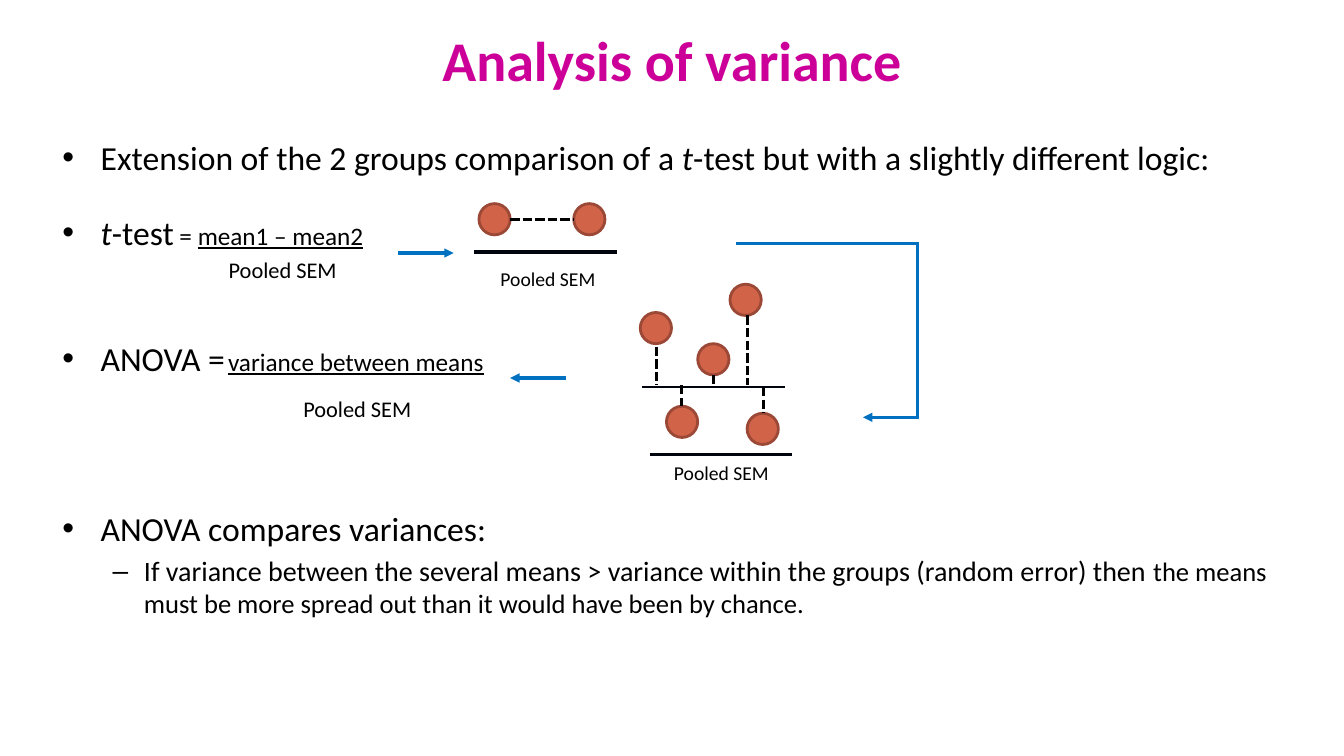
from dataclasses import dataclass

from lxml.etree import SubElement
from pptx import Presentation
from pptx.dml.color import RGBColor
from pptx.enum.dml import MSO_LINE_DASH_STYLE as Dash
from pptx.enum.shapes import MSO_CONNECTOR as Connector, MSO_SHAPE as Shape
from pptx.enum.text import MSO_ANCHOR as Anchor, MSO_AUTO_SIZE as AutoSize, PP_ALIGN as Align
from pptx.oxml.ns import qn
from pptx.shapes.shapetree import _BaseGroupShapes as ShapeTree
from pptx.text.text import TextFrame, _Paragraph as Paragraph, _Run as Run
from pptx.util import Inches, Pt

FONT = "Calibri"
BLACK, INK, BLUE, MAGENTA = "000000", "00040C", "0070C0", "CC0099"
DOT_FILL, DOT_EDGE, DOT_SIZE = "D16349", "9B4936", 0.31


@dataclass
class Piece:
    text: str
    size: float
    italic: bool = False
    underline: bool = False


@dataclass
class Item:
    pieces: list[Piece]
    space_before: float
    margin: float = 0.38
    hanging: float = 0.38
    bullet: str = ""
    level: int = 0


@dataclass
class Line:
    start: tuple[float, float]
    end: tuple[float, float]
    color: str = INK
    width: float = 2.25
    dashed: bool = False
    arrow: bool = False


def dashed(x1: float, y1: float, x2: float, y2: float) -> Line:
    return Line((x1, y1), (x2, y2), BLACK, dashed=True)


def rgb(color: str) -> RGBColor:
    return RGBColor.from_string(color)


def format_run(run: Run, size: float, color: str = BLACK) -> None:
    run.font.name = FONT
    run.font.size = Pt(size)
    run.font.color.rgb = rgb(color)


def draw_line(shapes: ShapeTree, line: Line) -> None:
    points = [Inches(value) for value in (*line.start, *line.end)]
    connector = shapes.add_connector(Connector.STRAIGHT, *points)
    connector.line.color.rgb = rgb(line.color)
    connector.line.width = Pt(line.width)
    if line.dashed:
        connector.line.dash_style = Dash.SQUARE_DOT
    properties = connector._element.spPr
    if line.arrow:
        SubElement(properties.find(qn("a:ln")), qn("a:tailEnd"), type="triangle")
    SubElement(properties, qn("a:effectLst"))


def draw_dot(shapes: ShapeTree, left: float, top: float) -> None:
    """Draw one group mean as a round marker."""
    dot = shapes.add_shape(Shape.OVAL, Inches(left), Inches(top), Inches(DOT_SIZE), Inches(DOT_SIZE))
    dot.shadow.inherit = False
    dot.fill.solid()
    dot.fill.fore_color.rgb = rgb(DOT_FILL)
    dot.line.color.rgb = rgb(DOT_EDGE)
    dot.line.width = Pt(2)


def draw_diagram(shapes: ShapeTree, dots: list[tuple[float, float]], lines: list[Line]) -> None:
    group = shapes.add_group_shape()
    for left, top in dots:
        draw_dot(group.shapes, left, top)
    for line in lines:
        draw_line(group.shapes, line)


def add_text_box(shapes: ShapeTree, left: float, top: float, width: float, height: float) -> TextFrame:
    box = shapes.add_textbox(Inches(left), Inches(top), Inches(width), Inches(height))
    return box.text_frame


def fill_item(paragraph: Paragraph, item: Item) -> None:
    paragraph.level = item.level
    paragraph.space_before = Pt(item.space_before)
    for piece in item.pieces:
        run = paragraph.add_run()
        run.text = piece.text
        format_run(run, piece.size)
        run.font.italic = piece.italic
        run.font.underline = piece.underline
    properties = paragraph._p.get_or_add_pPr()
    properties.set("marL", str(Inches(item.margin)))
    properties.set("indent", str(-Inches(item.hanging)))
    if item.bullet:
        SubElement(properties, qn("a:buFont"), typeface="Arial")
        SubElement(properties, qn("a:buChar"), char=item.bullet)
    else:
        SubElement(properties, qn("a:buNone"))


ITEMS = [
    Item([Piece("Extension of the 2 groups comparison of a ", 24), Piece("t", 24, italic=True),
          Piece("-test but with a slightly different logic:", 24)], 0, bullet="•"),
    Item([Piece("t", 24, italic=True), Piece("-test", 24), Piece(" = ", 18),
          Piece("mean1 – mean2", 18, underline=True)], 24.6, bullet="•"),
    Item([Piece("Pooled SEM", 16)], 3.2, margin=1.65, hanging=0),
    Item([Piece("ANOVA =", 24), Piece(" ", 10),
          Piece("variance between means", 18, underline=True)], 38.9, bullet="•"),
    Item([Piece("Pooled SEM", 16)], 12.4, margin=2.39, hanging=0),
    Item([Piece("ANOVA compares variances:", 24)], 61, bullet="•"),
    Item([Piece("If variance between the several means > variance within the groups (random error) then ", 20),
          Piece("the means must be more spread out than it would have been by chance.", 19)],
         4, margin=0.81, hanging=0.31, bullet="–", level=1),
]

T_TEST_DOTS = [(4.75, 2.02), (5.69, 2.02)]
T_TEST_LINES = [dashed(5.06, 2.18, 5.69, 2.18)]

ANOVA_DOTS = [(6.35, 3.1), (6.92, 3.41), (7.24, 2.82), (6.61, 4.03), (7.41, 4.1)]
ANOVA_LINES = [
    Line((6.37, 3.84), (7.79, 3.84), width=1.5),
    dashed(6.51, 3.44, 6.51, 3.82),
    dashed(7.08, 3.72, 7.08, 3.84),
    dashed(7.57, 3.84, 7.57, 4.1),
    dashed(7.41, 3.13, 7.41, 3.82),
    dashed(6.76, 3.82, 6.76, 4.03),
]

FRACTION_BARS = [Line((4.7, 2.5), (6.12, 2.5)), Line((6.45, 4.51), (7.86, 4.51))]
FLOW_LINES = [
    Line((3.95, 2.51), (4.5, 2.51), BLUE, arrow=True),
    Line((7.3, 2.42), (9.11, 2.42), BLUE),
    Line((9.1, 2.41), (9.1, 4.15), BLUE),
    Line((9.11, 4.14), (8.56, 4.14), BLUE, arrow=True),
    Line((5.61, 3.75), (5.06, 3.75), BLUE, arrow=True),
]
DENOMINATORS = [(4.86, 2.6), (6.58, 4.52)]


def main() -> None:
    presentation = Presentation()
    presentation.slide_width, presentation.slide_height = Inches(13.33), Inches(7.5)
    slide = presentation.slides.add_slide(presentation.slide_layouts[5])
    shapes = slide.shapes

    title = shapes.title
    title.left, title.top = Inches(3.95), Inches(0.21)
    title.width, title.height = Inches(5.43), Inches(0.76)
    title.text_frame.text = "Analysis of variance"
    title.text_frame.auto_size = AutoSize.NONE
    title.text_frame.vertical_anchor = Anchor.MIDDLE
    heading = title.text_frame.paragraphs[0]
    heading.alignment = Align.CENTER
    format_run(heading.runs[0], 40, MAGENTA)
    heading.runs[0].font.bold = True

    body = add_text_box(shapes, 0.52, 1.31, 12.44, 5.43)
    body.word_wrap = True
    for index, item in enumerate(ITEMS):
        fill_item(body.add_paragraph() if index else body.paragraphs[0], item)

    draw_diagram(shapes, T_TEST_DOTS, T_TEST_LINES)
    draw_diagram(shapes, ANOVA_DOTS, ANOVA_LINES)
    for line in FRACTION_BARS + FLOW_LINES:
        draw_line(shapes, line)

    for left, top in DENOMINATORS:
        label = add_text_box(shapes, left, top, 1.15, 0.34)
        label.word_wrap = False
        label.text = "Pooled SEM"
        label.paragraphs[0].alignment = Align.CENTER
        format_run(label.paragraphs[0].runs[0], 14)

    presentation.save("out.pptx")


if __name__ == "__main__":
    main()
